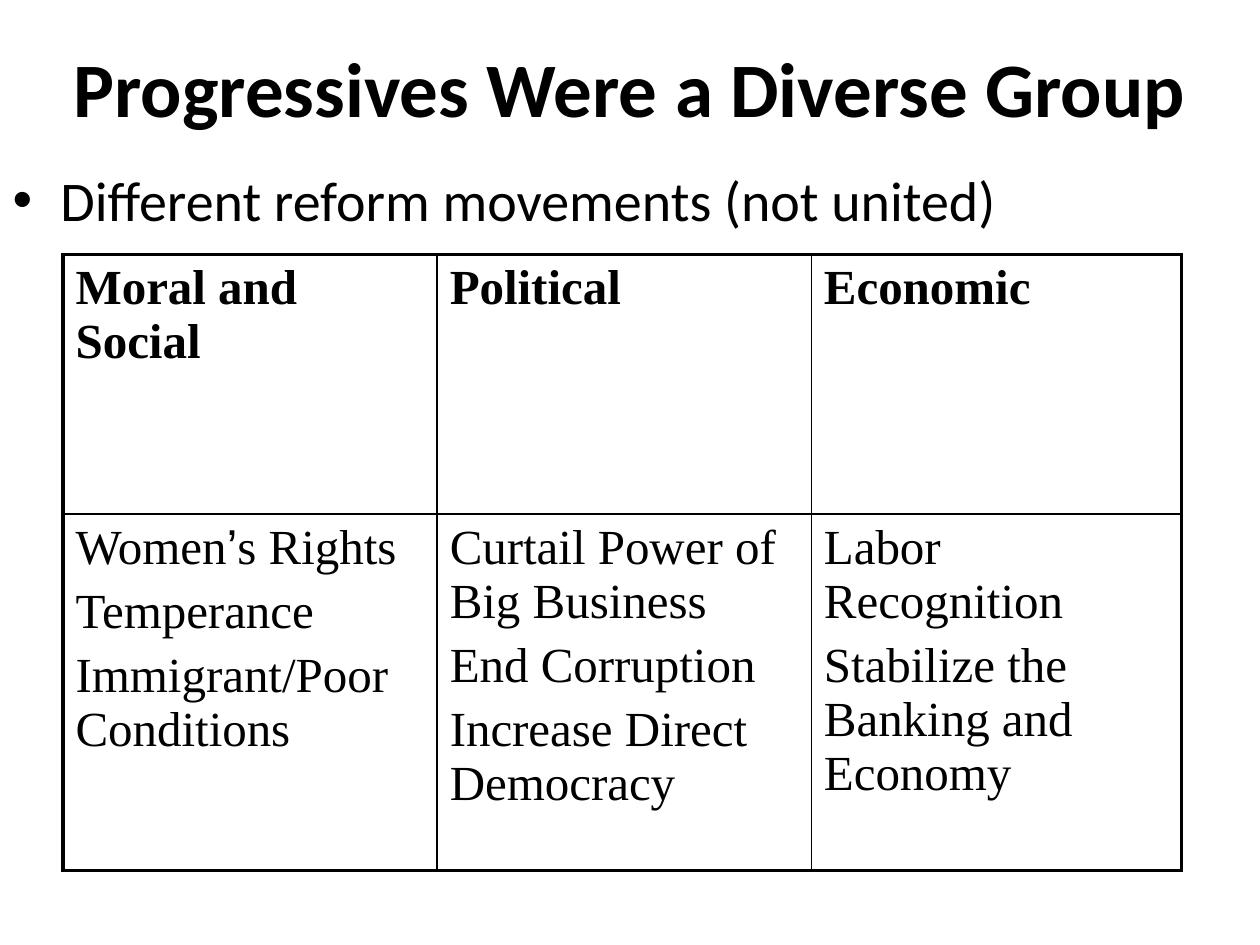
"""Build a slide with a table of Progressive reform movements."""
from lxml.etree import SubElement
from pptx import Presentation
from pptx.dml.color import RGBColor
from pptx.enum.text import MSO_ANCHOR, MSO_AUTO_SIZE, PP_ALIGN
from pptx.oxml.ns import qn
from pptx.util import Inches, Pt

TITLE = "Progressives Were a Diverse Group"
BULLET = "Different reform movements (not united)"
MOVEMENTS = {
    "Moral and Social": ["Women’s Rights", "Temperance", "Immigrant/Poor Conditions"],
    "Political": ["Curtail Power of Big Business", "End Corruption", "Increase Direct Democracy"],
    "Economic": ["Labor Recognition", "Stabilize the Banking and Economy"],
}
APOSTROPHE = "’"

THEME = {
    "ink": "000000",
    "title": {"name": "Calibri", "size": Pt(44), "bold": True},
    "bullet": {"name": "Calibri", "size": Pt(32), "bold": False},
    "header": {"name": "Times New Roman", "size": Pt(28), "bold": True},
    "cell": {"name": "Times New Roman", "size": Pt(28), "bold": False},
    "apostrophe": {"name": "Arial", "size": Pt(28), "bold": False},
    "outer_line": Pt(2.25),
    "inner_line": Pt(1),
}
SPACE_RATIO = 0.2
COLUMN_WIDTHS = [2.97, 2.97, 2.94]
ROW_HEIGHTS = [2.06, 2.83]
TABLE_LEFT, TABLE_TOP = 0.5, 2.02


def add_span(para, text, style):
    span = para.add_run()
    span.text = text
    for name, value in THEME[style].items():
        setattr(span.font, name, value)
    span.font.color.rgb = RGBColor.from_string(THEME["ink"])


def write_paragraphs(frame, lines, style):
    for index, line in enumerate(lines):
        para = frame.add_paragraph() if index else frame.paragraphs[0]
        para.space_before = Pt(THEME[style]["size"].pt * SPACE_RATIO)
        for part in line.partition(APOSTROPHE):
            if part:
                add_span(para, part, "apostrophe" if part == APOSTROPHE else style)


def place(box, left, top, width, height):
    position = {"left": left, "top": top, "width": width, "height": height}
    for name, value in position.items():
        setattr(box, name, Inches(value))
    box.text_frame.auto_size = MSO_AUTO_SIZE.NONE


def set_borders(cell, outer_sides):
    properties = cell._tc.get_or_add_tcPr()
    for side in "LRTB":
        width = THEME["outer_line" if outer_sides[side] else "inner_line"]
        line = SubElement(properties, qn(f"a:ln{side}"), w=str(int(width)))
        fill = SubElement(line, qn("a:solidFill"))
        SubElement(fill, qn("a:srgbClr"), val=THEME["ink"])


def add_movement_table(page):
    rows = [[[heading] for heading in MOVEMENTS], list(MOVEMENTS.values())]
    last_row, last_column = len(rows) - 1, len(MOVEMENTS) - 1
    table = page.shapes.add_table(
        len(rows), len(MOVEMENTS), Inches(TABLE_LEFT), Inches(TABLE_TOP),
        Inches(sum(COLUMN_WIDTHS)), Inches(sum(ROW_HEIGHTS)),
    ).table
    table.horz_banding = False
    for column, width in zip(table.columns, COLUMN_WIDTHS):
        column.width = Inches(width)
    for row, height in zip(table.rows, ROW_HEIGHTS):
        row.height = Inches(height)
    for r, contents in enumerate(rows):
        for c, lines in enumerate(contents):
            cell = table.cell(r, c)
            write_paragraphs(cell.text_frame, lines, "cell" if r else "header")
            set_borders(cell, {"L": c == 0, "R": c == last_column,
                               "T": r == 0, "B": r == last_row})
            cell.fill.background()


def main():
    deck = Presentation()
    deck.slide_width, deck.slide_height = Inches(10), Inches(7.5)
    page = deck.slides.add_slide(deck.slide_layouts[1])

    title = page.shapes.title
    place(title, 0, 0.06, 10, 1.25)
    title.text_frame.vertical_anchor = MSO_ANCHOR.MIDDLE
    heading = title.text_frame.paragraphs[0]
    heading.alignment = PP_ALIGN.CENTER
    add_span(heading, TITLE, "title")

    body = page.placeholders[1]
    place(body, 0, 1.26, 9, 4.95)
    write_paragraphs(body.text_frame, [BULLET], "bullet")
    bullet = body.text_frame.paragraphs[0]._p.get_or_add_pPr()
    bullet.set("marL", str(Inches(0.38)))
    bullet.set("indent", str(Inches(-0.38)))
    SubElement(bullet, qn("a:buChar"), char="•")

    add_movement_table(page)
    deck.save("out.pptx")


if __name__ == "__main__":
    main()
